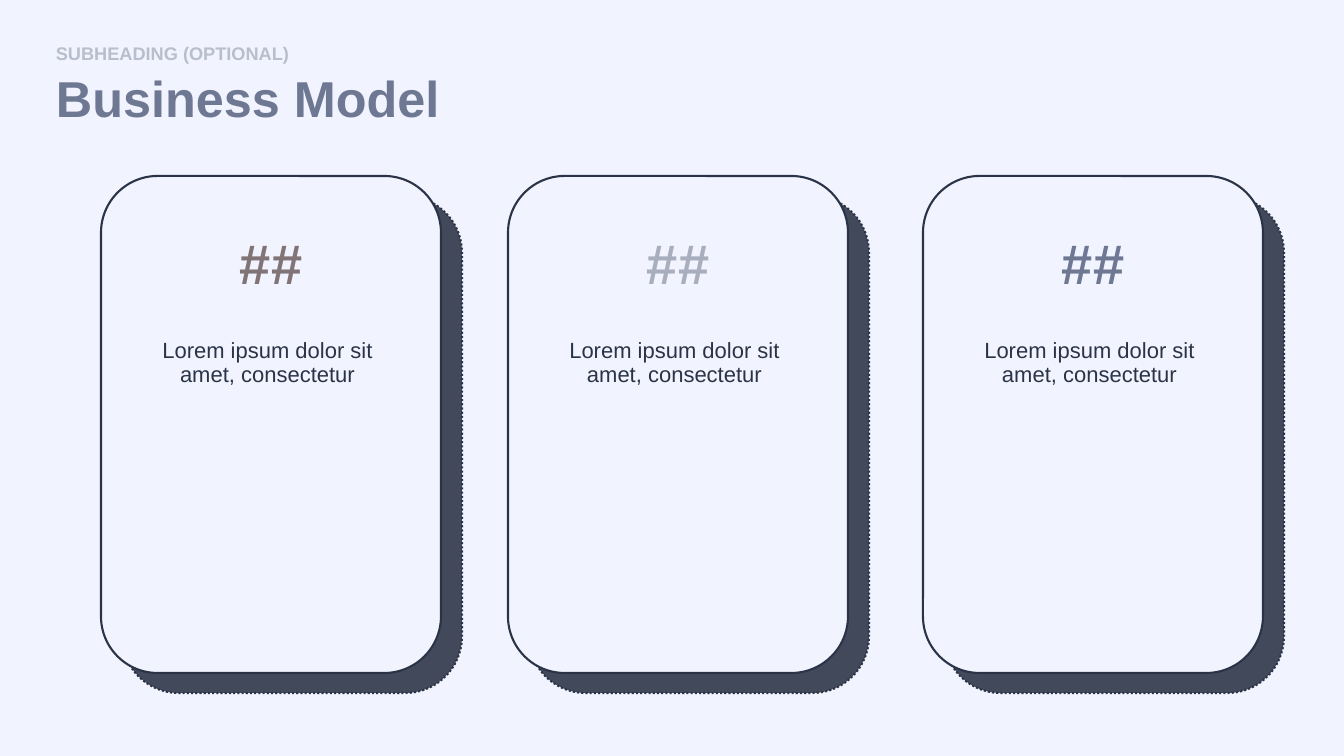
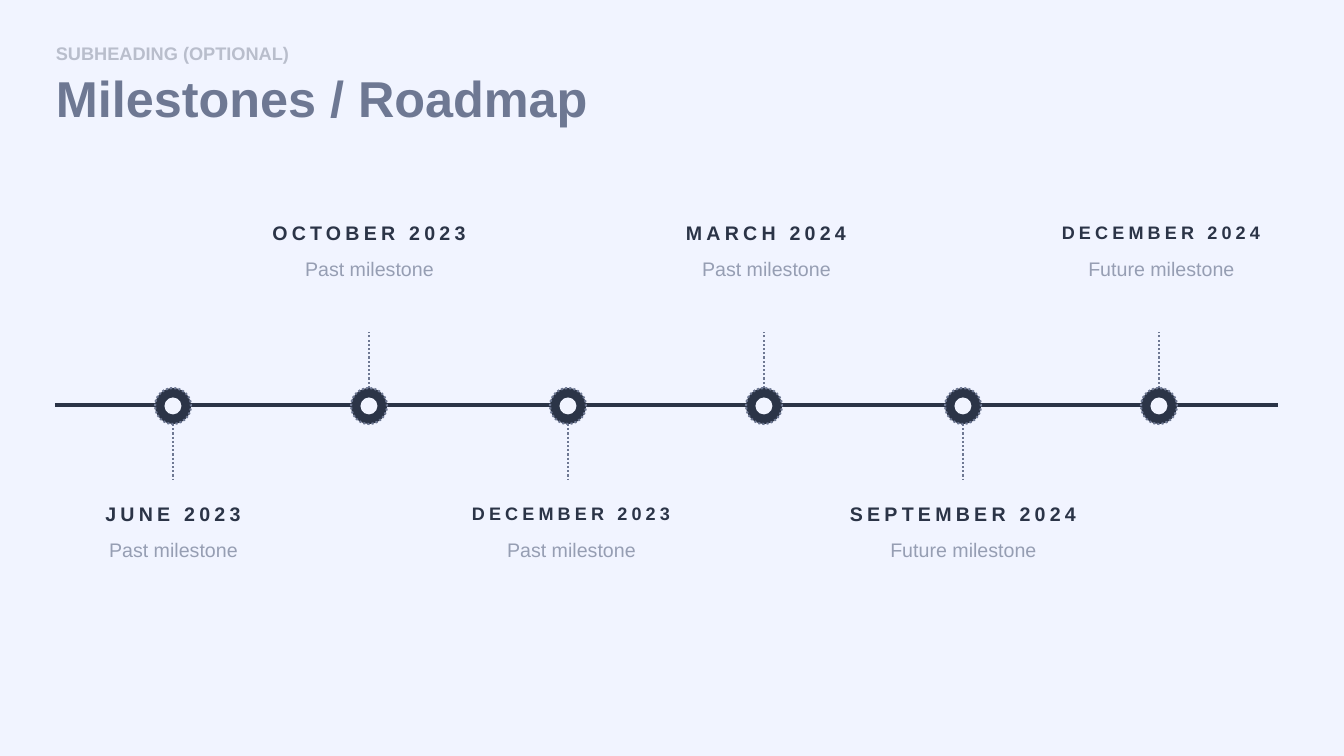
from dataclasses import dataclass
from typing import Any, Optional

import lxml.etree
import pptx
import pptx.dml.color
import pptx.enum.dml
import pptx.enum.shapes
import pptx.enum.text
import pptx.oxml.ns
import pptx.util

SLIDE_W, SLIDE_H = 1344, 756
EMU_PER_PX = 12192000 / SLIDE_W

FONT = "Arial"
PAPER = "F1F4FF"
INK = "2B3447"
SHADE = "42495B"
SLATE = "6E7893"
MIST = "A8AEBE"
TAUPE = "807477"
NOTE_GREY = "969EB3"
SUBHEAD_GREY = "B9BECC"

SHAPE = pptx.enum.shapes.MSO_SHAPE
ALIGN = pptx.enum.text.PP_ALIGN
DOTTED = pptx.enum.dml.MSO_LINE.ROUND_DOT


@dataclass(frozen=True)
class TextStyle:
    size: float
    color: str
    bold: bool = False
    align: ALIGN = ALIGN.CENTER
    tracking: int = 0  # hundredths of a point


@dataclass(frozen=True)
class Outline:
    color: str
    width: float
    dotted: bool = False


@dataclass(frozen=True)
class Card:
    x: int
    figure_color: str


@dataclass(frozen=True)
class Milestone:
    x: int
    label_x: int
    date: str
    note: str
    date_size: float = 14


TITLE = TextStyle(36, SLATE, bold=True, align=ALIGN.LEFT)
SUBHEAD = TextStyle(13, SUBHEAD_GREY, bold=True, align=ALIGN.LEFT)
CARD_TEXT = TextStyle(15.7, INK)
NOTE = TextStyle(14, NOTE_GREY)

CARD_EDGE = Outline(INK, 1.5)
SHADE_EDGE = Outline(INK, 1.5, dotted=True)
AXIS = Outline(INK, 2.25)
STEM = Outline(SLATE, 1.5, dotted=True)

CARDS = [Card(101, TAUPE), Card(508, MIST), Card(923, SLATE)]
CARD_Y, CARD_W, CARD_H = 176, 340, 497
SHADE_DX, SHADE_DY = 21, 20

MILESTONES = [
    Milestone(173, 173, "JUNE 2023", "Past milestone"),
    Milestone(369, 369, "OCTOBER 2023", "Past milestone"),
    Milestone(568, 571, "DECEMBER 2023", "Past milestone", 12.9),
    Milestone(764, 766, "MARCH 2024", "Past milestone"),
    Milestone(963, 963, "SEPTEMBER 2024", "Future milestone"),
    Milestone(1159, 1161, "DECEMBER 2024", "Future milestone", 12.9),
]
AXIS_Y, DOT_Y = 405, 406
DOT, HOLE, STEM_LENGTH = 36, 17, 56
LABEL_ABOVE_Y, LABEL_BELOW_Y = 219, 500
DATE_W, DATE_H, NOTE_W, NOTE_H = 278, 36, 243, 64


def px(n: float) -> pptx.util.Emu:
    return pptx.util.Emu(round(n * EMU_PER_PX))


def rgb(value: str) -> pptx.dml.color.RGBColor:
    return pptx.dml.color.RGBColor.from_string(value)


def set_line(line: Any, outline: Outline) -> None:
    line.color.rgb = rgb(outline.color)
    line.width = pptx.util.Pt(outline.width)
    if outline.dotted:
        line.dash_style = DOTTED


def add_text(slide: Any, text: str, x: int, y: int, w: int, h: int,
             style: TextStyle) -> None:
    sp = slide.shapes.add_textbox(px(x), px(y), px(w), px(h))
    tf = sp.text_frame
    tf.word_wrap = True
    tf.text = text
    p = tf.paragraphs[0]
    p.alignment = style.align
    p.line_spacing = 0.9
    r = p.runs[0]
    r.font.name = FONT
    r.font.size = pptx.util.Pt(style.size)
    r.font.bold = style.bold
    r.font.color.rgb = rgb(style.color)
    if style.tracking:
        r.font._element.set("spc", str(style.tracking))


def add_shape(slide: Any, kind: SHAPE, x: float, y: float, w: int, h: int,
              fill: str, outline: Optional[Outline] = None) -> None:
    sp = slide.shapes.add_shape(kind, px(x), px(y), px(w), px(h))
    sp.shadow.inherit = False
    sp.fill.solid()
    sp.fill.fore_color.rgb = rgb(fill)
    if outline:
        set_line(sp.line, outline)
    else:
        sp.line.fill.background()


def add_circle(slide: Any, cx: int, cy: int, size: int, fill: str,
               outline: Optional[Outline] = None) -> None:
    add_shape(slide, SHAPE.OVAL, cx - size / 2, cy - size / 2, size, size,
              fill, outline)


def add_line(slide: Any, x1: int, y1: int, x2: int, y2: int,
             outline: Outline) -> None:
    c = slide.shapes.add_connector(pptx.enum.shapes.MSO_CONNECTOR.STRAIGHT,
                                   px(x1), px(y1), px(x2), px(y2))
    set_line(c.line, outline)
    lxml.etree.SubElement(c._element.spPr, pptx.oxml.ns.qn("a:effectLst"))


def add_slide(prs: Any, title: str) -> Any:
    """Add a blank slide with the shared heading."""
    slide = prs.slides.add_slide(prs.slide_layouts[6])
    add_text(slide, title, 46, 69, 1241, 88, TITLE)
    add_text(slide, "SUBHEADING (OPTIONAL)", 46, 40, 626, 22, SUBHEAD)
    return slide


def draw_card(slide: Any, card: Card) -> None:
    add_shape(slide, SHAPE.ROUNDED_RECTANGLE, card.x + SHADE_DX,
              CARD_Y + SHADE_DY, CARD_W, CARD_H, SHADE, SHADE_EDGE)
    add_shape(slide, SHAPE.ROUNDED_RECTANGLE, card.x, CARD_Y, CARD_W, CARD_H,
              PAPER, CARD_EDGE)
    add_text(slide, "##", card.x + 47, 231, 246, 79,
             TextStyle(40, card.figure_color, bold=True))
    add_text(slide, "Lorem ipsum dolor sit amet, consectetur",
             card.x + 48, 335, 237, 64, CARD_TEXT)


def draw_milestone(slide: Any, m: Milestone, above: bool) -> None:
    side = -1 if above else 1
    stem_y = DOT_Y + side * DOT // 2
    add_line(slide, m.x, stem_y, m.x, stem_y + side * STEM_LENGTH, STEM)
    add_circle(slide, m.x, DOT_Y, DOT, INK, STEM)
    add_circle(slide, m.x, DOT_Y, HOLE, PAPER)

    label_y = LABEL_ABOVE_Y if above else LABEL_BELOW_Y
    add_text(slide, m.date, m.label_x - DATE_W // 2, label_y, DATE_W, DATE_H,
             TextStyle(m.date_size, INK, bold=True, tracking=300))
    add_text(slide, m.note, m.label_x - NOTE_W // 2, label_y + DATE_H,
             NOTE_W, NOTE_H, NOTE)


def main() -> None:
    prs = pptx.Presentation()
    prs.slide_width, prs.slide_height = px(SLIDE_W), px(SLIDE_H)
    background = prs.slide_master.background.fill
    background.solid()
    background.fore_color.rgb = rgb(PAPER)

    model = add_slide(prs, "Business Model")
    for card in CARDS:
        draw_card(model, card)

    roadmap = add_slide(prs, "Milestones / Roadmap")
    add_line(roadmap, 55, AXIS_Y, 1278, AXIS_Y, AXIS)
    for i, milestone in enumerate(MILESTONES):
        draw_milestone(roadmap, milestone, above=i % 2 == 1)

    prs.save("out.pptx")


if __name__ == "__main__":
    main()
